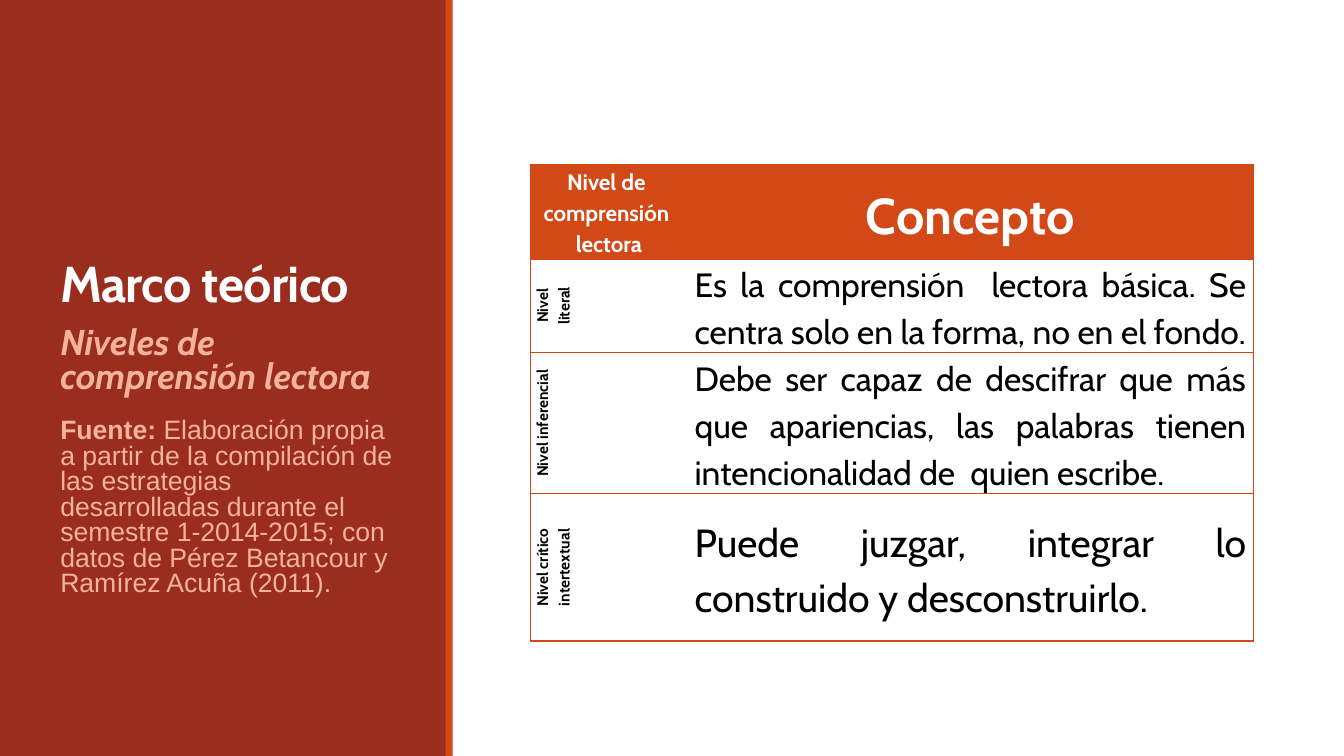
from lxml.etree import SubElement
from pptx import Presentation
from pptx.dml.color import RGBColor
from pptx.enum.shapes import MSO_SHAPE
from pptx.enum.text import MSO_ANCHOR, MSO_AUTO_SIZE, PP_ALIGN
from pptx.oxml.ns import qn
from pptx.util import Inches, Pt

BRICK = RGBColor(0x9B, 0x2D, 0x1F)
ORANGE = RGBColor(0xD3, 0x48, 0x17)
PEACH = RGBColor(0xF4, 0xB3, 0x9B)
WHITE = RGBColor(0xFF, 0xFF, 0xFF)
BLACK = RGBColor(0, 0, 0)


def add_text(para, text, size=19, font="Cabin", color=BLACK, bold=False,
             italic=False, align=None, line=1.0, after=0, indent=0, spacing=None):
    """Add formatted text to a paragraph; a newline becomes a line break."""
    para.alignment = align
    para.line_spacing = line
    para.space_before = Pt(0)
    para.space_after = Pt(after)
    if indent:
        properties = para._p.get_or_add_pPr()
        for side in ("marL", "marR"):
            properties.set(side, str(Inches(indent)))
        properties.set("indent", "0")
    for number, part in enumerate(text.split("\n")):
        if number:
            para.add_line_break()
        span = para.add_run()
        span.text = part
        span.font.name = font
        span.font.size = Pt(size)
        span.font.bold = bold
        span.font.italic = italic
        span.font.color.rgb = color
        if spacing:
            span._r.get_or_add_rPr().set("spc", str(int(spacing * 100)))


class SlideBuilder:
    def __init__(self, deck):
        self.slide = deck.slides.add_slide(deck.slide_layouts[5])

    def panel(self, left, width, color):
        """Add a full-height panel behind the title."""
        shape = self.slide.shapes.add_shape(
            MSO_SHAPE.RECTANGLE, Inches(left), 0, Inches(width), Inches(7.5))
        shape.shadow.inherit = False
        shape.fill.solid()
        shape.fill.fore_color.rgb = color
        shape.line.fill.background()
        self.slide.shapes.title._element.addprevious(shape._element)

    def title(self, text, left, top, width, height):
        box = self.slide.shapes.title
        box.left, box.top = Inches(left), Inches(top)
        box.width, box.height = Inches(width), Inches(height)
        frame = box.text_frame
        frame.word_wrap = True
        frame.auto_size = MSO_AUTO_SIZE.NONE
        frame.vertical_anchor = MSO_ANCHOR.BOTTOM
        add_text(frame.paragraphs[0], text, size=36, color=WHITE, bold=True,
                 align=PP_ALIGN.LEFT, line=0.85, spacing=-0.5)

    def text_frame(self, left, top, width, height):
        box = self.slide.shapes.add_textbox(
            Inches(left), Inches(top), Inches(width), Inches(height))
        box.text_frame.word_wrap = True
        return box.text_frame

    def table(self, left, top, widths, heights):
        table = self.slide.shapes.add_table(
            len(heights), len(widths), Inches(left), Inches(top),
            Inches(sum(widths)), Inches(sum(heights))).table
        table.horz_banding = False
        for column, width in zip(table.columns, widths):
            column.width = Inches(width)
        for row, height in zip(table.rows, heights):
            row.height = Inches(height)
        return table

    def cell(self, cell, lines, edges, fill=None, vertical=False, **style):
        cell.vertical_anchor = MSO_ANCHOR.MIDDLE
        cell.margin_left = cell.margin_right = Inches(0.07)
        cell.margin_top = cell.margin_bottom = 0
        properties = cell._tc.get_or_add_tcPr()
        if vertical:
            properties.set("vert", "vert270")
        for edge in ("lnL", "lnR", "lnT", "lnB"):
            border = SubElement(properties, qn(f"a:{edge}"), w=str(Pt(1)))
            if edge in edges:
                solid = SubElement(border, qn("a:solidFill"))
                SubElement(solid, qn("a:srgbClr"), val=str(ORANGE))
            else:
                SubElement(border, qn("a:noFill"))
        if fill is None:
            cell.fill.background()
        else:
            cell.fill.solid()
            cell.fill.fore_color.rgb = fill
        frame = cell.text_frame
        for number, text in enumerate(lines):
            para = frame.add_paragraph() if number else frame.paragraphs[0]
            add_text(para, text, line=1.15, **style)


def main():
    deck = Presentation()
    deck.slide_width, deck.slide_height = Inches(13.33), Inches(7.5)
    builder = SlideBuilder(deck)

    # Side panel
    builder.panel(0, 4.43, BRICK)
    builder.panel(4.42, 0.07, ORANGE)
    builder.title("Marco teórico", 0.5, 0.65, 3.5, 2.5)

    # Subtitle and source
    frame = builder.text_frame(0.5, 3.2, 3.5, 3.7)
    add_text(frame.paragraphs[0], "Niveles de comprensión lectora", size=25.6,
             color=PEACH, bold=True, italic=True, line=0.8, after=16.5)
    source = frame.add_paragraph()
    add_text(source, "Fuente:", font="Arial", color=PEACH, bold=True, line=0.8)
    add_text(source, " Elaboración propia a partir de la compilación de las "
             "estrategias desarrolladas durante el semestre 1-2014-2015; con "
             "datos de Pérez Betancour y Ramírez Acuña (2011).",
             font="Arial", color=PEACH, line=0.8)

    # Table of reading levels
    levels = [
        (["Nivel literal"], 24,
         "Es la comprensión  lectora básica. Se centra solo en la forma, "
         "no en el fondo."),
        (["Nivel inferencial"], 24,
         "Debe ser capaz de descifrar que más que apariencias, las palabras "
         "tienen intencionalidad de  quien escribe."),
        (["Nivel crítico", "intertextual"], 28,
         "Puede juzgar, integrar lo construido y desconstruirlo."),
    ]
    left_edges, right_edges = ("lnL", "lnT", "lnB"), ("lnR", "lnT", "lnB")
    table = builder.table(5.26, 1.63, [1.56, 5.61], [0.94, 0.93, 1.4, 1.46])
    header = dict(fill=ORANGE, color=WHITE, bold=True, align=PP_ALIGN.CENTER)
    builder.cell(table.cell(0, 0), ["Nivel de \ncomprensión \nlectora"],
                 left_edges, size=16, **header)
    builder.cell(table.cell(0, 1), ["Concepto"], right_edges, size=36, **header)
    for row, (names, size, concept) in enumerate(levels, start=1):
        builder.cell(table.cell(row, 0), names, left_edges, vertical=True,
                     size=11, bold=True, align=PP_ALIGN.CENTER, indent=0.08)
        builder.cell(table.cell(row, 1), [concept], right_edges, size=size,
                     align=PP_ALIGN.JUSTIFY)

    deck.save("out.pptx")


if __name__ == "__main__":
    main()
